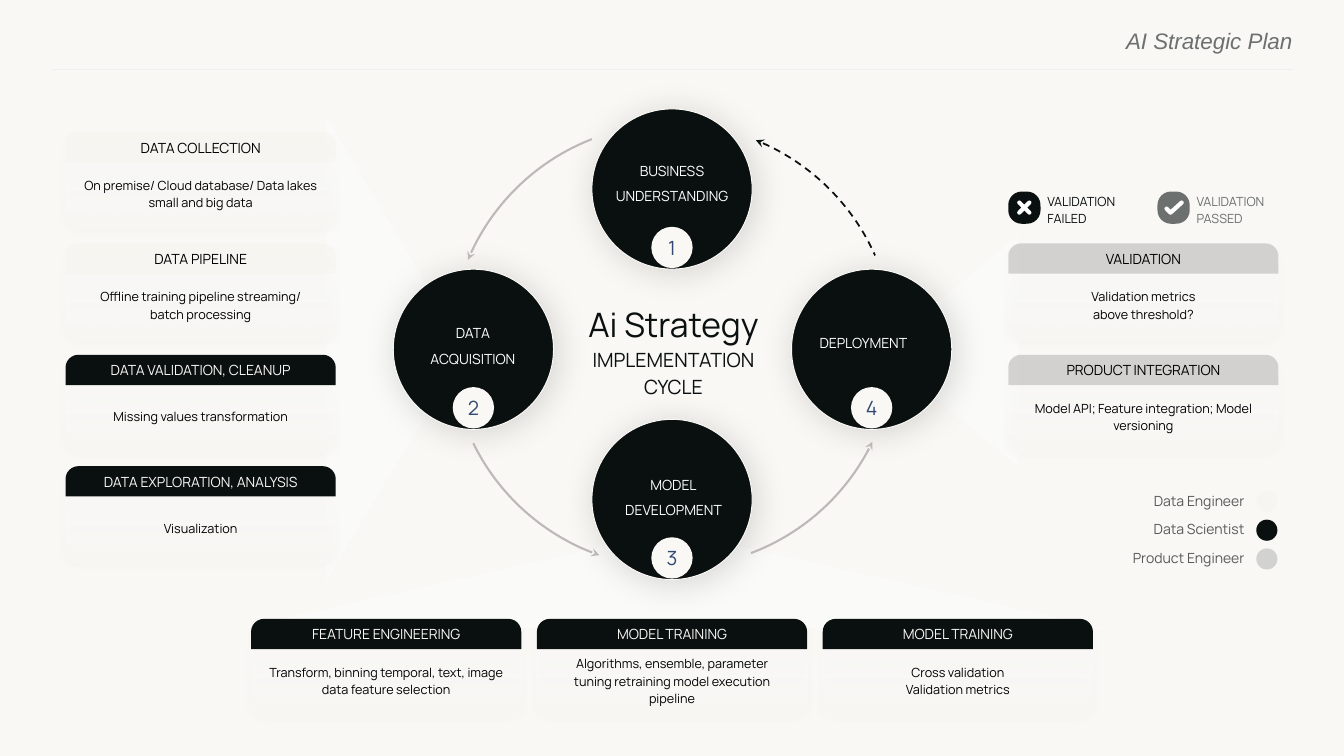
from lxml import etree
from pptx import Presentation
from pptx import util as u
from pptx.dml.color import RGBColor
from pptx.enum import dml, shapes, text
from pptx.oxml import ns

COLORS = {"paper": "F9F8F5", "ink": "09100F", "white": "FFFFFF", "black": "000000",
          "cream": "F5F1E8", "gray": "7B7B7B", "slate": "6C706F", "label": "595959",
          "navy": "324973", "arrow": "BEB8B8", "rule": "EFEFEF", "haze": "B5B7B7"}
RGB = {name: RGBColor.from_string(value) for name, value in COLORS.items()}
KIND = shapes.MSO_SHAPE
ALIGN = text.PP_ALIGN
MIDDLE, TOP = text.MSO_ANCHOR.MIDDLE, text.MSO_ANCHOR.TOP

deck = Presentation()
deck.slide_width, deck.slide_height = u.Inches(13.33), u.Inches(7.5)
page = deck.slides.add_slide(deck.slide_layouts[5])
page.background.fill.solid()
page.background.fill.fore_color.rgb = RGB["paper"]


def add_box(kind, at, fill=None, alpha=100, line=None, adj=(), shadow=None):
    """Shape with an optional fill, outline and (color, alpha, blur, distance, angle) shadow."""
    box = page.shapes.add_shape(kind, *map(u.Inches, at))
    for index, value in enumerate(adj):
        box.adjustments[index] = value
    box.fill.background()
    if fill:
        box.fill.solid()
        box.fill.fore_color.rgb = RGB[fill]
    if alpha < 100:
        color = box._element.spPr.find(".//" + ns.qn("a:srgbClr"))
        etree.SubElement(color, ns.qn("a:alpha"), val=str(alpha * 1000))
    box.line.fill.background()
    if line:
        box.line.color.rgb = RGB[line]
        box.line.width = u.Pt(0.75)
    box.shadow.inherit = False
    if shadow:
        name, opacity, blur, distance, angle = shadow
        effects = box._element.spPr.find(ns.qn("a:effectLst"))
        outer = etree.SubElement(effects, ns.qn("a:outerShdw"), blurRad=str(u.Pt(blur)),
                                 dist=str(u.Pt(distance)), dir=str(angle * 60000),
                                 algn="ctr", rotWithShape="0")
        color = etree.SubElement(outer, ns.qn("a:srgbClr"), val=COLORS[name])
        etree.SubElement(color, ns.qn("a:alpha"), val=str(opacity * 1000))
    return box


def write(target, lines, size, color, align=ALIGN.CENTER, spacing=1.0, anchor=MIDDLE,
          insets=(0.1, 0, 0.1, 0.03), font="Manrope", italic=False):
    """Put lines into a shape, or into a new text box when target is a position."""
    if isinstance(target, tuple):
        target = page.shapes.add_textbox(*map(u.Inches, target))
    frame = target.text_frame
    left, top, right, bottom = map(u.Inches, insets)
    layout = {"word_wrap": True, "auto_size": text.MSO_AUTO_SIZE.NONE, "vertical_anchor": anchor,
              "margin_left": left, "margin_top": top, "margin_right": right, "margin_bottom": bottom}
    for name, value in layout.items():
        setattr(frame, name, value)
    for index, line in enumerate(lines):
        para = frame.paragraphs[0] if index == 0 else frame.add_paragraph()
        para.alignment, para.line_spacing = align, spacing
        span = para.add_run()
        span.text = line
        # A size list gives one size per line
        points = size[index] if isinstance(size, list) else size
        for name, value in {"size": u.Pt(points), "name": font, "italic": italic}.items():
            setattr(span.font, name, value)
        span.font.color.rgb = RGB[color]
    return frame


# Title and rule
title = page.shapes.title
for side, inches in {"left": 6.56, "top": 0.27, "width": 6.26, "height": 0.24}.items():
    setattr(title, side, u.Inches(inches))
write(title, ["AI Strategic Plan"], 16, "slate", ALIGN.RIGHT, anchor=TOP,
      insets=(0, 0, 0, 0), font="Arial", italic=True)
rule = page.shapes.add_connector(shapes.MSO_CONNECTOR.STRAIGHT, u.Inches(0.52), u.Inches(0.69),
                                 u.Inches(12.82), u.Inches(0.69))
rule.line.color.rgb = RGB["rule"]
rule.line.width = u.Pt(0.75)
etree.SubElement(rule._element.spPr, ns.qn("a:effectLst"))

# Light beams from the circles to the cards
for at, turn in [((8.26, 2.79, 2.3, 1.38), 270), ((1.62, 2.77, 4.61, 1.38), 90),
                 ((2.38, 5.27, 8.58, 0.96), 0)]:
    add_box(KIND.ISOSCELES_TRIANGLE, at, "white", 30).rotation = turn
add_box(KIND.ROUNDED_RECTANGLE, (4.95, 1.71, 3.44, 3.44), "paper", adj=[0.5])

# Cycle: circle corner, label lines, label position, alignment
stages = [
    (5.87, 1.08, ["BUSINESS", "UNDERSTANDING"], (5.91, 1.51, 1.51, 0.49), ALIGN.CENTER),
    (3.9, 2.67, ["DATA", "ACQUISITION"], (4.1, 3.12, 1.18, 0.49), ALIGN.CENTER),
    (5.87, 4.16, ["MODEL", "DEVELOPMENT"], (6.01, 4.62, 1.34, 0.49), ALIGN.CENTER),
    (7.85, 2.67, ["DEPLOYMENT"], (8.03, 3.22, 1.23, 0.24), ALIGN.LEFT),
]
for left, top, *_ in stages:
    add_box(KIND.OVAL, (left, top, 1.59, 1.59), "ink", line="paper",
            shadow=("black", 15, 25.1, 3, 45))
for number, (left, top, label, at, align) in enumerate(stages, 1):
    write(at, label, 10, "white", align, 1.5, TOP, (0.1, 0.02, 0.1, 0.05))
    badge = add_box(KIND.OVAL, (left + 0.59, top + 1.17, 0.41, 0.41), "paper")
    write(badge, [str(number)], 14, "navy", insets=(0, 0, 0, 0))
center = write((5.27, 2.47, 2.82, 1.94), ["Ai Strategy", "IMPLEMENTATION", "CYCLE"],
               [24, 14, 14], "ink", spacing=1.15, insets=(0.1, 0.05, 0.1, 0.05))
center.paragraphs[0].line_spacing = 1.2

# Arrows around the cycle
for turn, start, end, color, width in [
        (180, 173.54, 200.36, "arrow", 1.5), (90, 177.39, 203.58, "arrow", 1.5),
        (0, 175.25, 201.59, "ink", 1.25), (270, 175.68, 203.22, "arrow", 1.5)]:
    arc = add_box(KIND.ARC, (4.47, 1.23, 4.4, 4.4), line=color, adj=[start, end])
    arc.rotation = turn
    arc.line.width = u.Pt(width)
    if color == "ink":
        arc.line.dash_style = dml.MSO_LINE.DASH
    etree.SubElement(arc.line._get_or_add_ln(), ns.qn("a:headEnd"), type="stealth")

# Cards: left, top, role, heading, body lines, body width
ROLES = {"engineer": ("cream", 30, "black"), "scientist": ("ink", 100, "paper"),
         "product": ("gray", 30, "black")}
rows = [1.31 + 1.105 * row for row in range(4)]
columns = [2.49 + 2.835 * column for column in range(3)]
cards = [
    (0.65, rows[0], "engineer", "DATA COLLECTION",
     ["On premise/ Cloud database/ Data lakes small and big data"], 2.53),
    (0.65, rows[1], "engineer", "DATA PIPELINE",
     ["Offline training pipeline streaming/ batch processing"], 2.53),
    (0.65, rows[2], "scientist", "DATA VALIDATION, CLEANUP", ["Missing values transformation"], 2.53),
    (0.65, rows[3], "scientist", "DATA EXPLORATION, ANALYSIS", ["Visualization"], 2.53),
    (columns[0], 6.14, "scientist", "FEATURE ENGINEERING",
     ["Transform, binning temporal, text, image data feature selection"], 2.53),
    (columns[1], 6.14, "scientist", "MODEL TRAINING",
     ["Algorithms, ensemble, parameter tuning retraining model execution pipeline"], 2.25),
    (columns[2], 6.14, "scientist", "MODEL TRAINING", ["Cross validation", "Validation metrics"], 2.53),
    (10, rows[1], "product", "VALIDATION", ["Validation metrics above threshold?"], 1.55),
    (10, rows[2], "product", "PRODUCT INTEGRATION",
     ["Model API; Feature integration; Model versioning"], 2.53),
]
for left, top, role, heading, body, width in cards:
    card = add_box(KIND.ROUNDED_RECTANGLE, (left, top, 2.68, 0.97), adj=[0.127],
                   shadow=("haze", 10, 5, 0, 0))
    card.fill.gradient()
    card.fill.gradient_angle = 270
    for stop, name in zip(card.fill.gradient_stops, ["white", "paper"]):
        stop.color.rgb = RGB[name]
    clear = card._element.spPr.find(".//" + ns.qn("a:srgbClr"))
    etree.SubElement(clear, ns.qn("a:alpha"), val="0")
    fill, alpha, ink = ROLES[role]
    header = add_box(KIND.ROUND_2_SAME_RECTANGLE, (left, top, 2.68, 0.3), fill, alpha, adj=[0.425, 0])
    write(header, [heading], 10, ink)
    write((left + 1.34 - width / 2, top + 0.3, width, 0.61), body, 9, "black", spacing=1.15,
          insets=(0.1, 0.05, 0.1, 0.05))

# Validation outcomes: strokes of the cross and the tick
cross = [[(10.11, 2.01), (10.21, 2.11)], [(10.21, 2.01), (10.11, 2.11)]]
tick = [[(11.57, 2.07), (11.61, 2.11), (11.72, 2.01)]]
for left, label, color, strokes in [(10, "VALIDATION FAILED", "ink", cross),
                                    (11.48, "VALIDATION PASSED", "slate", tick)]:
    add_box(KIND.ROUNDED_RECTANGLE, (left, 1.9, 0.32, 0.32), color, adj=[0.42])
    for points in strokes:
        start, *rest = [(u.Inches(x), u.Inches(y)) for x, y in points]
        builder = page.shapes.build_freeform(*start)
        builder.add_line_segments(rest, close=False)
        mark = builder.convert_to_shape()
        mark.fill.background()
        mark.line.color.rgb = RGB["white"]
        mark.line.width = u.Pt(3)
        mark.line._get_or_add_ln().set("cap", "rnd")
        mark.shadow.inherit = False
    write((left + 0.29, 1.85, 1.07, 0.43), [label], 9, color, ALIGN.LEFT, 1.15, TOP,
          (0.1, 0.05, 0.1, 0.05))

# Role legend
for row, (role, label) in enumerate(zip(ROLES, ["Data Engineer", "Data Scientist", "Product Engineer"])):
    top = 4.83 + 0.285 * row
    write((10.86, top, 1.58, 0.3), [label], 10, "label", ALIGN.RIGHT)
    add_box(KIND.OVAL, (12.46, top + 0.04, 0.21, 0.21), *ROLES[role][:2])

deck.save("out.pptx")
